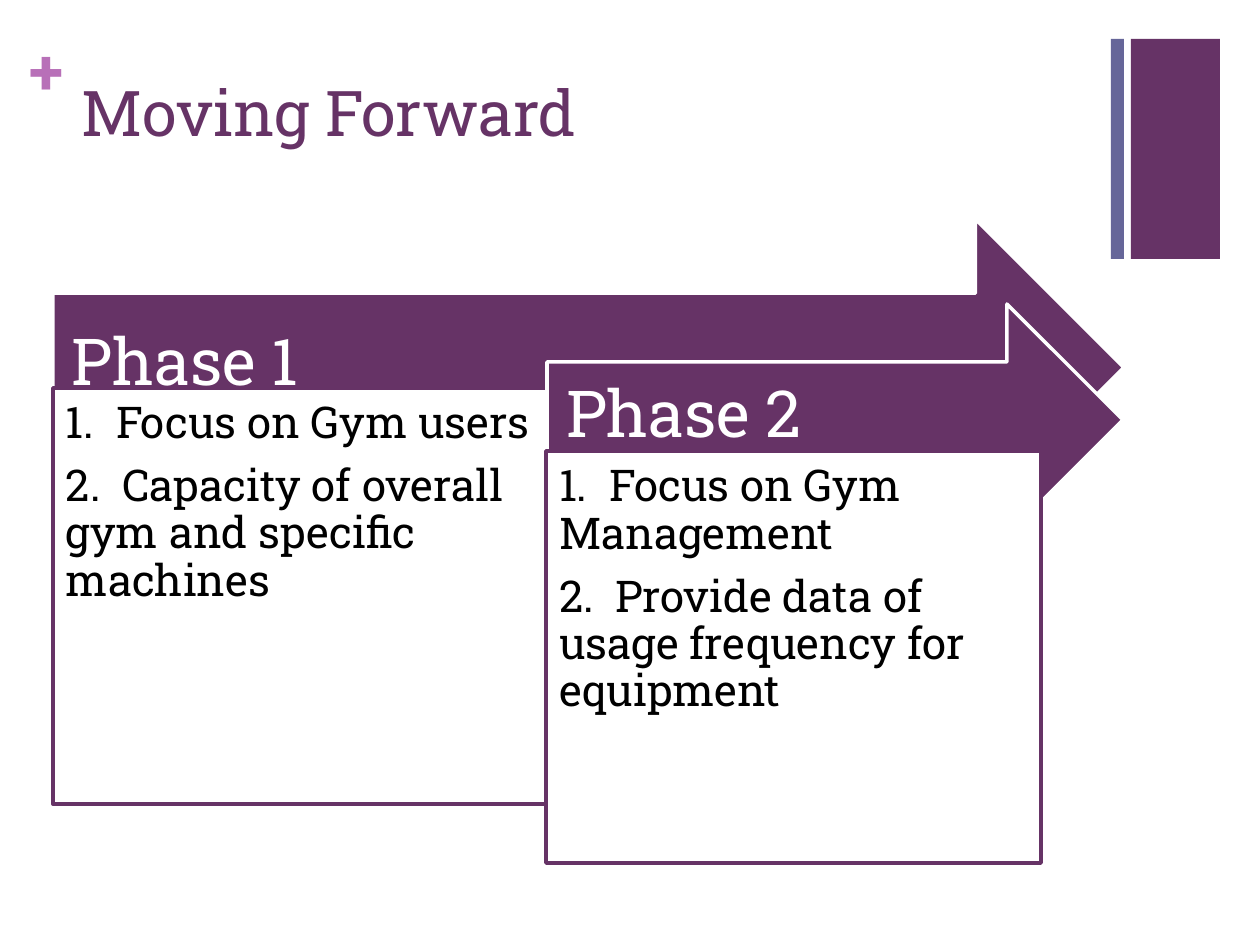
"""Build the "Moving Forward" slide with two overlapping phase arrows."""
from pptx import Presentation
from pptx.dml.color import RGBColor
from pptx.enum.shapes import MSO_SHAPE as Shape
from pptx.enum.text import MSO_ANCHOR as Anchor, PP_ALIGN as Align
from pptx.util import Emu, Pt

COLORS = {"plum": "663366", "slate": "666699", "orchid": "B870B8",
          "white": "FFFFFF", "black": "000000"}
FONT = "Roboto Slab"
EMU_PER_PX = 914400 / 126


def px(*lengths):
    return [Emu(round(length * EMU_PER_PX)) for length in lengths]


def write(holder, lines, size, color, insets, anchor=Anchor.TOP, spacing=None, bold=False):
    frame = holder.text_frame
    frame.text = "\n".join(lines)
    frame.word_wrap = True
    frame.vertical_anchor = anchor
    frame.margin_left, frame.margin_top, frame.margin_right, frame.margin_bottom = px(*insets)
    for paragraph in frame.paragraphs:
        paragraph.alignment = Align.LEFT
        if spacing:
            paragraph.line_spacing = spacing
            paragraph.space_after = Pt(round(size * 0.35))
        for run in paragraph.runs:
            run.font.name = FONT
            run.font.size = Pt(size)
            run.font.bold = bold
            run.font.color.rgb = RGBColor.from_string(COLORS[color])


deck = Presentation()
deck.slide_width, deck.slide_height = px(1260, 945)
slide = deck.slides.add_slide(deck.slide_layouts[5])
shapes = slide.shapes

title = shapes.title
title.left, title.top, title.width, title.height = px(69, 67, 1041, 154)
write(title, ["Moving Forward"], 36, "plum", (13, 6, 13, 6))

plus = shapes.add_textbox(*px(30, 32, 37, 77))
write(plus, ["+"], 36, "orchid", (0, 0, 0, 0), bold=True)

phases = [
    ("Phase 1", (53, 219, 1071, 297), (53, 388, 495, 416),
     ["1.  Focus on Gym users",
      "2.  Capacity of overall gym and specific machines"]),
    ("Phase 2", (547, 304, 576, 232), (546, 451, 495, 412),
     ["1.  Focus on Gym Management",
      "2.  Provide data of usage frequency for equipment"]),
]
blocks = [(Shape.RECTANGLE, (1131, 39, 89, 220), "plum", None, None),
          (Shape.RECTANGLE, (1111, 39, 13, 220), "slate", None, None)]
for heading, arrow_area, card_area, goals in phases:
    blocks += [
        (Shape.RIGHT_ARROW, arrow_area, "plum", "white",
         ([heading], 37, "white", (19, 19, 35, 25), Anchor.MIDDLE, 0.9)),
        (Shape.RECTANGLE, card_area, "white", "plum",
         (goals, 25, "black", (13, 13, 13, 13), Anchor.TOP, 0.9)),
    ]

for kind, area, fill, outline, wording in blocks:
    block = shapes.add_shape(kind, *px(*area))
    block.shadow.inherit = False
    block.fill.solid()
    block.fill.fore_color.rgb = RGBColor.from_string(COLORS[fill])
    if outline:
        block.line.color.rgb = RGBColor.from_string(COLORS[outline])
        block.line.width = Pt(2)
    else:
        block.line.fill.background()
    if wording:
        write(block, *wording)

deck.save("out.pptx")
